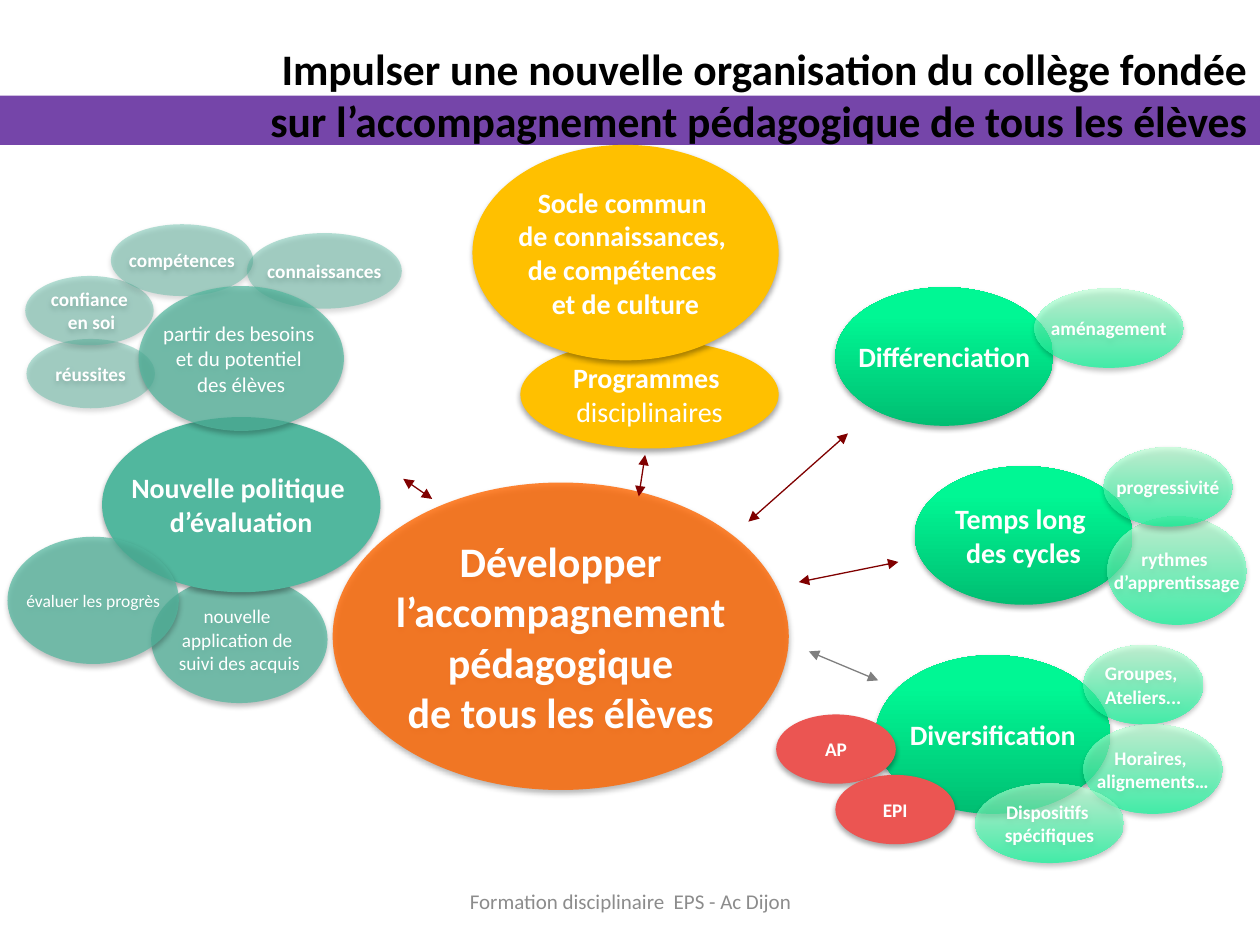
import pptx
import pptx.dml.color
import pptx.enum.shapes
import pptx.enum.text
import pptx.oxml.ns
import pptx.util
from lxml import etree

Inches = pptx.util.Inches
Pt = pptx.util.Pt
qn = pptx.oxml.ns.qn
ALIGN = pptx.enum.text.PP_ALIGN
SHAPE = pptx.enum.shapes.MSO_SHAPE

COLORS = {
    "purple": "7545A9", "black": "000000", "white": "FFFFFF", "footer": "8C8C8C",
    "orange": "FF6600", "amber": "FFC000", "teal": "51B79E", "red": "EB5552",
    "dark red": "800000", "grey": "7F7F7F",
}

# Gradients run from bottom to top: position, colour, opacity (percent)
GRADIENTS = {
    "green": [(0, "00BE72", 100), (80, "00F794", 100), (100, "00F895", 100)],
    "pale green": [(0, "00FF99", 65), (100, "BDFFD4", 65)],
}

# Styles of the bubbles: fill, opacity, text size, bold
STYLES = {
    "centre": ("orange", 80, 24, True),
    "programme": ("amber", 100, 16, True),
    "policy": ("teal", 100, 16, True),
    "need": ("teal", 71, 12, False),
    "tool": ("teal", 71, 11, False),
    "progress": ("teal", 71, 10, False),
    "quality": ("teal", 42, 11, True),
    "lever": ("green", 100, 16, True),
    "detail": ("pale green", 65, 11, True),
    "scheme": ("red", 100, 11, True),
}


def rgb(name):
    return pptx.dml.color.RGBColor.from_string(COLORS[name])


def add_element(parent, tag, **attributes):
    values = {key: str(value) for key, value in attributes.items()}
    return etree.SubElement(parent, qn(tag), values)


def add_color(parent, value, opacity):
    color = add_element(parent, "a:srgbClr", val=value)
    if opacity < 100:
        add_element(color, "a:alpha", val=opacity * 1000)


class SlideBuilder:
    font_name = "Calibri"

    def __init__(self, slide):
        self.slide = slide

    def add_lines(self, shape, lines, size, color, bold=False, align=ALIGN.CENTER, wrap=False):
        """Fill a shape with lines; a line is text, or a (text, bold) pair."""
        frame = shape.text_frame
        frame_format = {"word_wrap": wrap,
                        "auto_size": pptx.enum.text.MSO_AUTO_SIZE.NONE,
                        "vertical_anchor": pptx.enum.text.MSO_ANCHOR.MIDDLE}
        for name, value in frame_format.items():
            setattr(frame, name, value)
        for index, line in enumerate(lines):
            text, line_bold = line if isinstance(line, tuple) else (line, bold)
            paragraph = frame.paragraphs[0] if index == 0 else frame.add_paragraph()
            paragraph.alignment = align
            run = paragraph.add_run()
            run.text = text
            font_format = {"name": self.font_name, "size": Pt(size), "bold": line_bold}
            for name, value in font_format.items():
                setattr(run.font, name, value)
            run.font.color.rgb = rgb(color)

    def text(self, box, lines, size, color, **options):
        shape = self.slide.shapes.add_textbox(*map(Inches, box))
        self.add_lines(shape, lines, size, color, **options)

    def shape(self, kind, box):
        shape = self.slide.shapes.add_shape(kind, *map(Inches, box))
        shape.shadow.inherit = False
        shape.line.fill.background()
        return shape

    def band(self, box, color):
        shape = self.shape(SHAPE.RECTANGLE, box)
        shape.fill.solid()
        shape.fill.fore_color.rgb = rgb(color)

    def bubble(self, style, box, *lines):
        fill, opacity, size, bold = STYLES[style]
        shape = self.shape(SHAPE.OVAL, box)
        properties = shape._element.spPr
        if fill in GRADIENTS:
            shape.fill.gradient()
            shape.fill.gradient_angle = 90
            stops = properties.find(qn("a:gradFill")).find(qn("a:gsLst"))
            for stop in list(stops):
                stops.remove(stop)
            for position, value, stop_opacity in GRADIENTS[fill]:
                stop = add_element(stops, "a:gs", pos=position * 1000)
                add_color(stop, value, stop_opacity)
        else:
            shape.fill.solid()
            shape.fill.fore_color.rgb = rgb(fill)
            if opacity < 100:
                color = properties.find(qn("a:solidFill"))[0]
                add_element(color, "a:alpha", val=opacity * 1000)
        # Soft shadow below the bubble
        shadow = add_element(properties.find(qn("a:effectLst")), "a:outerShdw",
                             blurRad=Pt(3.1), dist=Pt(1.8), dir=90 * 60000,
                             rotWithShape=0)
        add_color(shadow, COLORS["black"], 35)
        self.add_lines(shape, lines, size, "white", bold)

    def double_arrow(self, start, end, color):
        connector = self.slide.shapes.add_connector(
            pptx.enum.shapes.MSO_CONNECTOR.STRAIGHT, *map(Inches, start + end))
        connector.line.width = Pt(0.75)
        connector.line.color.rgb = rgb(color)
        properties = connector._element.spPr
        line = properties.find(qn("a:ln"))
        for tag in ("a:headEnd", "a:tailEnd"):
            add_element(line, tag, type="triangle")
        add_element(properties, "a:effectLst")


def main():
    presentation = pptx.Presentation()
    presentation.slide_width = Inches(10)
    presentation.slide_height = Inches(7.5)
    builder = SlideBuilder(presentation.slides.add_slide(presentation.slide_layouts[6]))

    # Title and footer
    builder.band((0, 0.76, 10, 0.39), "purple")
    builder.text((1.69, 0.21, 8.31, 1.07),
                 ["Impulser une nouvelle organisation du collège fondée "
                  "sur l’accompagnement pédagogique de tous les élèves"],
                 24.9, "black", bold=True, align=ALIGN.RIGHT, wrap=True)
    builder.text((3.42, 6.95, 3.17, 0.4),
                 ["Formation disciplinaire  EPS - Ac Dijon"], 12, "footer", wrap=True)

    # Bubbles behind the arrows
    back_bubbles = [
        ("centre", (2.64, 3.83, 3.62, 2.44), "Développer", "l’accompagnement",
         " pédagogique ", "de tous les élèves"),
        ("programme", (4.13, 2.7, 2.05, 0.86), "Programmes ", ("disciplinaires", False)),
        ("programme", (3.75, 1.15, 2.43, 1.71), "Socle commun ",
         "de connaissances, ", "de compétences ", "et de culture"),
        ("quality", (0.21, 2.69, 1.02, 0.55), "réussites"),
        ("quality", (0.2, 2.19, 1.02, 0.55), "confiance", " en soi"),
        ("quality", (0.88, 1.78, 1.13, 0.57), "compétences"),
        ("quality", (1.96, 1.85, 1.23, 0.6), "connaissances"),
        ("tool", (1.2, 4.57, 1.4, 1.01), "nouvelle ", "application de ",
         "suivi des acquis"),
        ("lever", (6.63, 2.28, 1.73, 1.1), "Différenciation"),
        ("lever", (7.26, 3.7, 1.73, 1.1), "Temps long ", "des cycles"),
        ("lever", (6.95, 5.2, 1.86, 1.26), "Diversification"),
        ("detail", (8.6, 5.12, 0.95, 0.63), "Groupes, ", "Ateliers..."),
        ("detail", (8.6, 5.75, 1.1, 0.71), "Horaires, ", "alignements…"),
        ("detail", (8.79, 4.1, 1.1, 0.86), "rythmes ", "d’apprentissage"),
        ("detail", (8.76, 3.55, 1.02, 0.63), "progressivité"),
        ("detail", (8.21, 2.29, 1.18, 0.63), "aménagement"),
    ]
    for bubble in back_bubbles:
        builder.bubble(*bubble)

    # Double arrows around the centre
    arrows = [
        ((7.13, 4.46), (6.34, 4.62), "dark red"),
        ((5.94, 4.14), (6.73, 3.44), "dark red"),
        ((6.97, 5.4), (6.42, 5.17), "grey"),
        ((3.43, 3.96), (3.2, 3.8), "dark red"),
        ((5.12, 3.61), (5.07, 3.94), "dark red"),
    ]
    for arrow in arrows:
        builder.double_arrow(*arrow)

    # Bubbles in front
    front_bubbles = [
        ("scheme", (6.16, 5.67, 0.95, 0.55), "AP"),
        ("scheme", (6.63, 6.15, 0.95, 0.55), "EPI"),
        ("policy", (0.81, 3.31, 2.21, 1.39), "Nouvelle politique ", "d’évaluation"),
        ("progress", (0.06, 4.26, 1.36, 1.01), "évaluer les progrès"),
        ("need", (1.1, 2.27, 1.63, 1.15), "partir des besoins ",
         "et du potentiel ", "des élèves"),
        ("detail", (7.74, 6.22, 1.18, 0.63), "Dispositifs ", "spécifiques"),
    ]
    for bubble in front_bubbles:
        builder.bubble(*bubble)

    presentation.save("out.pptx")


if __name__ == "__main__":
    main()
